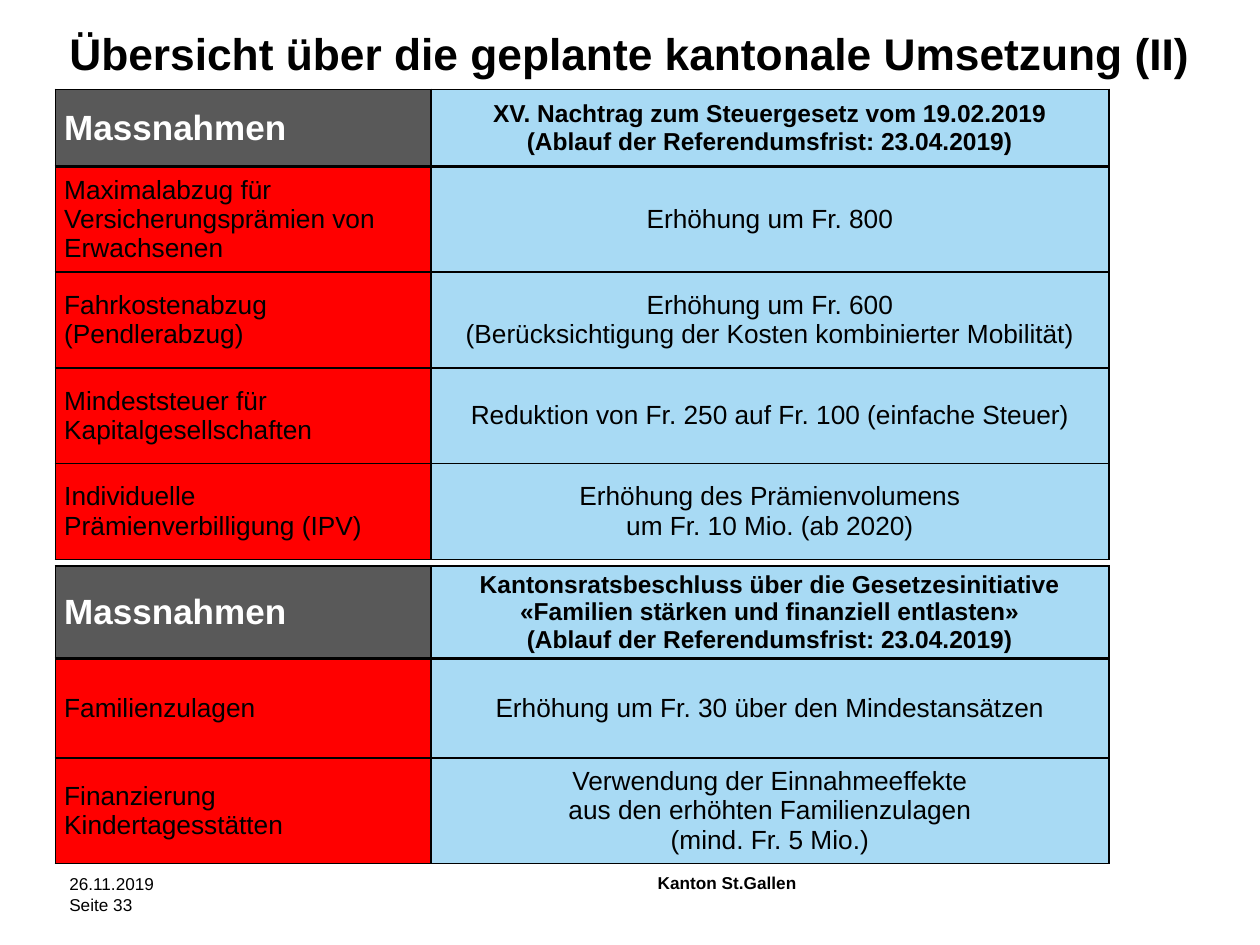
from dataclasses import dataclass

from lxml import etree
from pptx import Presentation
from pptx.dml.color import RGBColor
from pptx.enum.text import MSO_ANCHOR, MSO_AUTO_SIZE, PP_ALIGN
from pptx.oxml.ns import qn
from pptx.util import Inches, Pt

LEFT, CENTER = PP_ALIGN.LEFT, PP_ALIGN.CENTER
TOP, MIDDLE, BOTTOM = MSO_ANCHOR.TOP, MSO_ANCHOR.MIDDLE, MSO_ANCHOR.BOTTOM
NO_FIT = MSO_AUTO_SIZE.NONE
TITLE_ONLY = 5


@dataclass(frozen=True)
class Theme:
    font: str = "Arial"
    black: str = "000000"
    white: str = "FFFFFF"
    grey: str = "595959"
    red: str = "FF0000"
    blue: str = "A8DAF4"
    title: float = 25.3
    label: float = 20
    heading: float = 14
    body: float = 15
    footer: float = 9.8
    thin: float = 1
    thick: float = 2.25


class Deck:
    """Places elements on a grid of 100 columns by 75 rows."""

    COLS, ROWS = 100, 75

    def __init__(self, theme):
        self.t = theme
        self.prs = Presentation()
        self.prs.slide_width, self.prs.slide_height = Inches(10), Inches(7.5)
        self.s = self.prs.slides.add_slide(self.prs.slide_layouts[TITLE_ONLY])

    def x(self, cols):
        return round(self.prs.slide_width * cols / self.COLS)

    def y(self, rows):
        return round(self.prs.slide_height * rows / self.ROWS)

    def box(self, col, row, cols, rows):
        return self.x(col), self.y(row), self.x(cols), self.y(rows)

    def add_lines(self, tf, text, size, color, bold=False, align=LEFT, spacing=None):
        for i, line in enumerate(text.split("\n")):
            p = tf.paragraphs[0] if i == 0 else tf.add_paragraph()
            p.alignment = align
            if spacing:
                p.line_spacing = Pt(spacing)
            r = p.add_run()
            r.text = line
            r.font.color.rgb = RGBColor.from_string(color)
            for key, value in {"name": self.t.font, "size": Pt(size),
                               "bold": bold}.items():
                setattr(r.font, key, value)

    def frame(self, tf, anchor):
        for key, value in {"margin_left": 0, "margin_top": 0, "margin_right": 0,
                           "margin_bottom": 0, "word_wrap": True,
                           "auto_size": NO_FIT, "vertical_anchor": anchor}.items():
            setattr(tf, key, value)

    def title(self, text, *grid):
        sp = self.s.shapes.title
        sp.left, sp.top, sp.width, sp.height = self.box(*grid)
        self.frame(sp.text_frame, BOTTOM)
        self.add_lines(sp.text_frame, text, self.t.title, self.t.black, bold=True)

    def text(self, text, *grid, **style):
        tf = self.s.shapes.add_textbox(*self.box(*grid)).text_frame
        self.frame(tf, TOP)
        self.add_lines(tf, text, self.t.footer, self.t.black, **style)

    def borders(self, cell, top, bottom):
        tcPr = cell._tc.get_or_add_tcPr()
        sides = {"L": self.t.thin, "R": self.t.thin, "T": top, "B": bottom}
        for i, (side, width) in enumerate(sides.items()):
            ln = etree.Element(qn(f"a:ln{side}"), w=str(Pt(width)))
            fill = etree.SubElement(ln, qn("a:solidFill"))
            etree.SubElement(fill, qn("a:srgbClr"), val=self.t.black)
            tcPr.insert(i, ln)

    def cell(self, cell, text, fill, **style):
        cell.fill.solid()
        cell.fill.fore_color.rgb = RGBColor.from_string(fill)
        for key, value in {"margin_left": Inches(0.07), "margin_right": Inches(0.07),
                           "margin_top": Inches(0.04), "margin_bottom": Inches(0.04),
                           "vertical_anchor": MIDDLE}.items():
            setattr(cell, key, value)
        self.add_lines(cell.text_frame, text, **style)

    def table(self, rows, heights, widths, col, row):
        t = self.t
        tbl = self.s.shapes.add_table(
            len(rows), len(widths),
            *self.box(col, row, sum(widths), sum(heights))).table
        tbl.first_row = tbl.horz_banding = False
        for column, width in zip(tbl.columns, widths):
            column.width = self.x(width)
        for i, (texts, height) in enumerate(zip(rows, heights)):
            tbl.rows[i].height = self.y(height)
            head = i == 0
            label, content = tbl.cell(i, 0), tbl.cell(i, 1)
            self.cell(label, texts[0], t.grey if head else t.red,
                      size=t.label if head else t.body,
                      color=t.white if head else t.black, bold=head)
            self.cell(content, texts[1], t.blue,
                      size=t.heading if head else t.body,
                      color=t.black, bold=head, align=CENTER)
            for cell in (label, content):
                self.borders(cell, t.thick if i == 1 else t.thin,
                             t.thick if head else t.thin)


TAX_LAW = [
    ("Massnahmen", "XV. Nachtrag zum Steuergesetz vom 19.02.2019\n"
                   "(Ablauf der Referendumsfrist: 23.04.2019)"),
    ("Maximalabzug für Versicherungsprämien von Erwachsenen",
     "Erhöhung um Fr. 800"),
    ("Fahrkostenabzug (Pendlerabzug)",
     "Erhöhung um Fr. 600\n(Berücksichtigung der Kosten kombinierter Mobilität)"),
    ("Mindeststeuer für Kapitalgesellschaften",
     "Reduktion von Fr. 250 auf Fr. 100 (einfache Steuer)"),
    ("Individuelle Prämienverbilligung (IPV)",
     "Erhöhung des Prämienvolumens\num Fr. 10 Mio. (ab 2020)"),
]
FAMILIES = [
    ("Massnahmen", "Kantonsratsbeschluss über die Gesetzesinitiative "
                   "«Familien stärken und finanziell entlasten»\n"
                   "(Ablauf der Referendumsfrist: 23.04.2019)"),
    ("Familienzulagen", "Erhöhung um Fr. 30 über den Mindestansätzen"),
    ("Finanzierung Kindertagesstätten",
     "Verwendung der Einnahmeeffekte\naus den erhöhten Familienzulagen\n"
     "(mind. Fr. 5 Mio.)"),
]


def main():
    deck = Deck(Theme())
    text_col, table_col, widths = 5.5, 4.4, (29.8, 53.8)

    # Title
    deck.title("Übersicht über die geplante kantonale Umsetzung (II)",
               text_col, 1.9, 91.7, 4.4)

    # Tables of measures
    deck.table(TAX_LAW, (6.1, 8.4, 7.6, 7.6, 7.6), widths, table_col, 7.1)
    deck.table(FAMILIES, (6.1, 7.9, 8.4), widths, table_col, 44.9)

    # Footer
    deck.text("26.11.2019", text_col, 69.3, 22.4, 1.4, spacing=11.9)
    deck.text("Seite 33", text_col, 71, 22.4, 1.4)
    deck.text("Kanton St.Gallen", 52.2, 69.2, 39.8, 1.7, bold=True)

    deck.prs.save("out.pptx")


if __name__ == "__main__":
    main()
